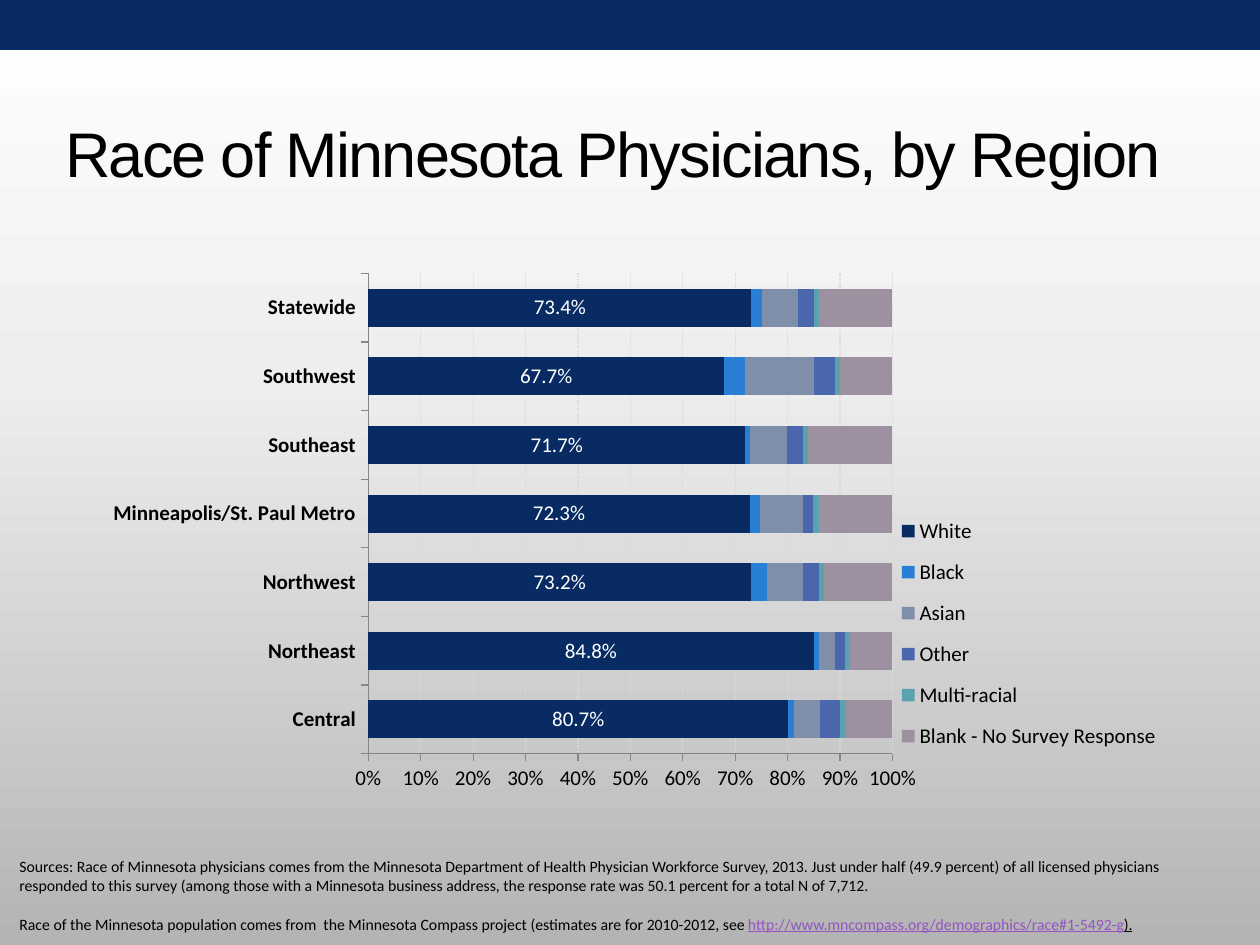
from copy import deepcopy

from lxml.etree import SubElement
from pptx import Presentation
from pptx.chart.data import CategoryChartData
from pptx.dml.color import RGBColor
from pptx.enum.chart import XL_CHART_TYPE, XL_LEGEND_POSITION, XL_TICK_MARK
from pptx.enum.dml import MSO_LINE
from pptx.enum.shapes import MSO_SHAPE
from pptx.enum.text import MSO_ANCHOR, MSO_AUTO_SIZE, PP_ALIGN
from pptx.oxml.ns import qn
from pptx.util import Pt

COLORS = {
    "text": "000000", "paper": "FFFFFF", "navy": "072B62", "link": "9454C3",
    "grid": "D9D9D9", "axis": "868686", "mid": "EEEEEE", "bottom": "B4B4B4",
    "White": "072B62", "Black": "297FD5", "Asian": "7F8FA9", "Other": "4A66AC",
    "Multi-racial": "5AA2AE", "Blank - No Survey Response": "9D90A0",
}
REGIONS = ["Central", "Northeast", "Northwest", "Minneapolis/St. Paul Metro",
           "Southeast", "Southwest", "Statewide"]
SHARES = {
    "White": [0.807, 0.848, 0.732, 0.723, 0.717, 0.677, 0.734],
    "Black": [0.01, 0.01, 0.03, 0.02, 0.01, 0.04, 0.02],
    "Asian": [0.05, 0.03, 0.07, 0.08, 0.07, 0.13, 0.07],
    "Other": [0.04, 0.02, 0.03, 0.02, 0.03, 0.04, 0.03],
    "Multi-racial": [0.01] * 7,
    "Blank - No Survey Response": [0.09, 0.08, 0.13, 0.14, 0.16, 0.1, 0.14],
}
SURVEY_NOTE = (
    "Sources: Race of Minnesota physicians comes from the Minnesota Department of Health "
    "Physician Workforce Survey, 2013. Just under half (49.9 percent) of all licensed "
    "physicians responded to this survey (among those with a Minnesota business address, "
    "the response rate was 50.1 percent for a total N of 7,712."
)
POPULATION_NOTE = ("Race of the Minnesota population comes from  the Minnesota Compass project "
                   "(estimates are for 2010-2012, see ")


def rgb(name):
    """Return the named palette colour."""
    return RGBColor.from_string(COLORS[name])


def format_font(font, size=12, color="text", name="Calibri", bold=False):
    """Apply the chart and text font settings."""
    font.name, font.size, font.bold = name, Pt(size), bold
    font.color.rgb = rgb(color)


def add_text(p, text, underline=None, spacing=None, **fmt):
    """Add a formatted run to a paragraph."""
    r = p.add_run()
    r.text = text
    format_font(r.font, **fmt)
    r.font.underline = underline
    if spacing is not None:
        r.font._element.set("spc", str(int(spacing * 100)))


def paint_background(s):
    """Fill the slide with a vertical three-stop gradient."""
    fill = s.background.fill
    fill.gradient()
    fill.gradient_angle = 270
    stops = s._element.find(".//" + qn("a:gsLst"))
    stops.append(deepcopy(stops[-1]))
    looks = [("paper", 0), ("mid", 0.4), ("bottom", 1)]
    for stop, (color, position) in zip(fill.gradient_stops, looks):
        stop.color.rgb = rgb(color)
        stop.position = position


def add_band(s, box, color):
    """Draw a full-width band."""
    sp = s.shapes.add_shape(MSO_SHAPE.RECTANGLE, *map(Pt, box))
    sp.shadow.inherit = False
    sp.fill.solid()
    sp.fill.fore_color.rgb = rgb(color)
    sp.line.fill.background()


def place_title(s, box, text):
    """Place and format the title placeholder."""
    sp = s.shapes.title
    sp.left, sp.top, sp.width, sp.height = map(Pt, box)
    tf = sp.text_frame
    tf.auto_size = MSO_AUTO_SIZE.NONE
    tf.vertical_anchor = MSO_ANCHOR.MIDDLE
    p = tf.paragraphs[0]
    p.alignment = PP_ALIGN.LEFT
    add_text(p, text, size=36, name="Arial", spacing=-1)


def set_layout(element, x, y, w, h, inner=False):
    """Give a chart part a manual layout in fractions of the chart."""
    layout = element.find(qn("c:layout"))
    if layout is None:
        layout = element.makeelement(qn("c:layout"), {})
        if inner:
            element.insert(0, layout)
        else:
            element.find(qn("c:legendPos")).addnext(layout)
    for child in list(layout):
        layout.remove(child)
    manual = SubElement(layout, qn("c:manualLayout"))
    values = {"xMode": "edge", "yMode": "edge", "x": x, "y": y, "w": w, "h": h}
    if inner:
        values = {"layoutTarget": "inner", **values}
    for tag, value in values.items():
        SubElement(manual, qn("c:" + tag)).set("val", str(value))


def format_axes(chart):
    """Format the region and percentage axes."""
    for axis in (chart.category_axis, chart.value_axis):
        axis.major_tick_mark = XL_TICK_MARK.OUTSIDE
        axis.minor_tick_mark = XL_TICK_MARK.NONE
        axis.format.line.color.rgb = rgb("axis")
        axis.format.line.width = Pt(0.75)
    format_font(chart.category_axis.tick_labels.font, bold=True)
    axis = chart.value_axis
    axis.minimum_scale, axis.maximum_scale, axis.major_unit = 0, 1, 0.1
    format_font(axis.tick_labels.font)
    axis.tick_labels.number_format = "0%"
    axis.tick_labels.number_format_is_linked = False
    line = axis.major_gridlines.format.line
    line.color.rgb = rgb("grid")
    line.width = Pt(0.75)
    line.dash_style = MSO_LINE.ROUND_DOT


def add_race_chart(s, box):
    """Add the stacked bar chart of race by region."""
    data = CategoryChartData(number_format="###0.0%")
    data.categories = REGIONS
    for name, values in SHARES.items():
        data.add_series(name, values)
    chart = s.shapes.add_chart(XL_CHART_TYPE.BAR_STACKED_100, *map(Pt, box), data).chart
    format_font(chart.font)
    chart.has_title = False
    format_axes(chart)
    plot = chart.plots[0]
    plot.gap_width, plot.overlap, plot.vary_by_categories = 81, 100, False
    for series in plot.series:
        series.format.fill.solid()
        series.format.fill.fore_color.rgb = rgb(series.name)
    labels = plot.series[0].data_labels
    labels.show_value = True
    labels.number_format = "###0.0%"
    labels.number_format_is_linked = False
    format_font(labels.font, color="paper")
    chart.has_legend = True
    chart.legend.position = XL_LEGEND_POSITION.RIGHT
    chart.legend.include_in_layout = False
    format_font(chart.legend.font)
    set_layout(chart._chartSpace.chart.plotArea, 0.27, 0.02, 0.48, 0.88, inner=True)
    set_layout(chart.legend._element, 0.75, 0.44, 0.25, 0.48)


def add_sources(s, box):
    """Add the source notes below the chart."""
    tf = s.shapes.add_textbox(*map(Pt, box)).text_frame
    tf.word_wrap = True
    tf.auto_size = MSO_AUTO_SIZE.SHAPE_TO_FIT_TEXT
    tf.vertical_anchor = MSO_ANCHOR.MIDDLE
    add_text(tf.paragraphs[0], SURVEY_NOTE, size=9)
    p = tf.add_paragraph()
    p.space_before = Pt(11)
    add_text(p, POPULATION_NOTE, size=9)
    add_text(p, "http://www.mncompass.org/demographics/race#1-5492-g",
             size=9, color="link", underline=True)
    add_text(p, ").", size=9, underline=True)


def main():
    """Build the slide and save it."""
    prs = Presentation()
    prs.slide_width, prs.slide_height = Pt(720), Pt(540)
    s = prs.slides.add_slide(prs.slide_layouts[5])
    paint_background(s)
    add_band(s, (0, 17.5, 720, 18), "paper")
    add_band(s, (0, 0, 720, 28.5), "navy")
    place_title(s, (30, 48, 648, 78), "Race of Minnesota Physicians, by Region")
    add_race_chart(s, (42, 150, 624, 312))
    add_sources(s, (4, 486, 668, 51))
    prs.save("out.pptx")


if __name__ == "__main__":
    main()
